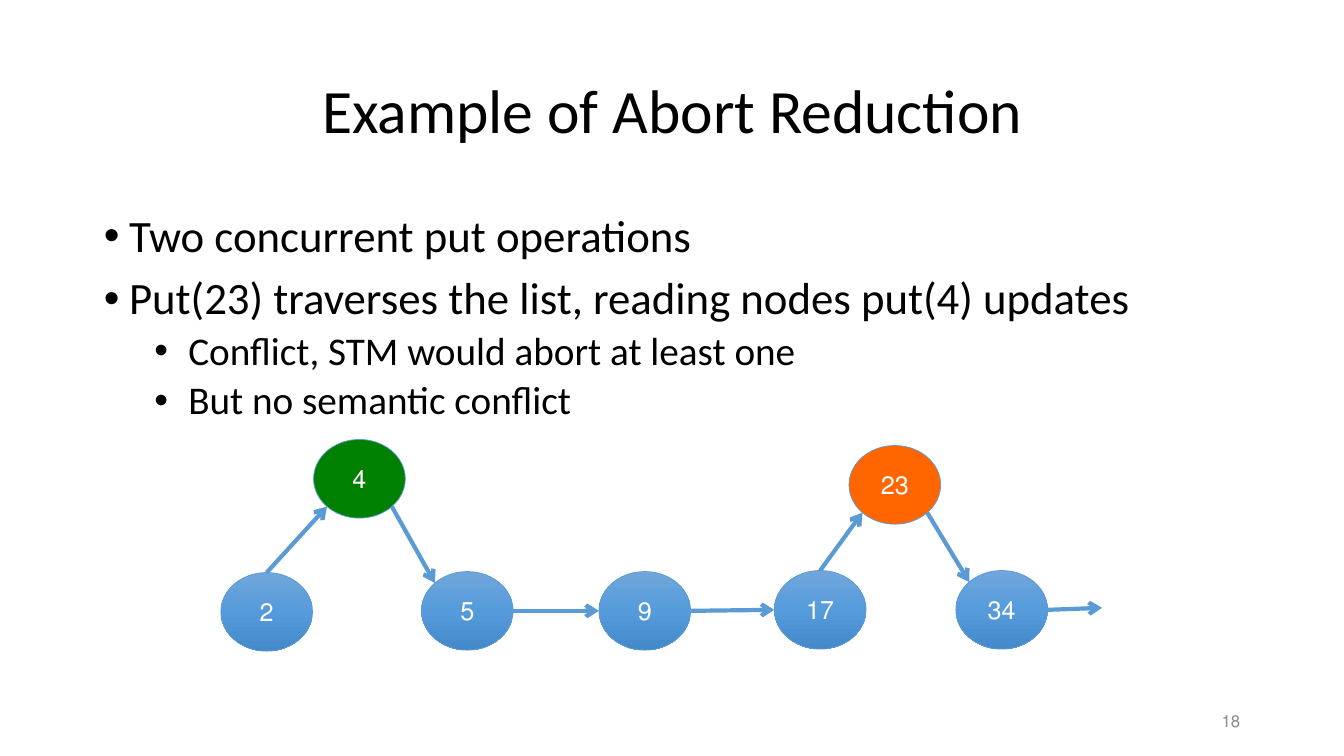
from copy import deepcopy

from lxml import etree
from pptx import Presentation
from pptx.dml.color import RGBColor
from pptx.enum.shapes import MSO_CONNECTOR, MSO_SHAPE
from pptx.enum.text import MSO_ANCHOR, MSO_AUTO_SIZE, PP_ALIGN
from pptx.oxml.ns import qn
from pptx.util import Inches, Pt

STRAIGHT = MSO_CONNECTOR.STRAIGHT
OVAL = MSO_SHAPE.OVAL
MIDDLE, TOP = MSO_ANCHOR.MIDDLE, MSO_ANCHOR.TOP
NO_AUTOFIT = MSO_AUTO_SIZE.NONE
LEFT, CENTER, RIGHT = PP_ALIGN.LEFT, PP_ALIGN.CENTER, PP_ALIGN.RIGHT

BLACK = RGBColor(0x00, 0x00, 0x00)
WHITE = RGBColor(0xFF, 0xFF, 0xFF)
GRAY = RGBColor(0x8C, 0x8C, 0x8C)
BLUE = RGBColor(0x5B, 0x9B, 0xD5)
GREEN = RGBColor(0x00, 0x80, 0x00)
ORANGE = RGBColor(0xFF, 0x66, 0x00)
NODE_GRADIENT = (
    (0, RGBColor(0x71, 0xA6, 0xDB)),
    (0.5, RGBColor(0x55, 0x9B, 0xDB)),
    (1, RGBColor(0x44, 0x8A, 0xCA)),
)

FONT = "Calibri"
NODE_WIDTH, NODE_HEIGHT = 0.91, 0.78
DIAGONAL = 0.5 ** 0.5
ANCHORS = {
    "top": (0, -1),
    "left": (-1, 0),
    "right": (1, 0),
    "top left": (-DIAGONAL, -DIAGONAL),
    "bottom left": (-DIAGONAL, DIAGONAL),
    "bottom right": (DIAGONAL, DIAGONAL),
}
NODES = {
    "2": (2.19, 5.68, None),
    "5": (4.18, 5.67, None),
    "9": (5.94, 5.67, None),
    "17": (7.68, 5.66, None),
    "34": (9.48, 5.66, None),
    "4": (3.11, 4.36, GREEN),
    "23": (8.42, 4.42, ORANGE),
}
LINKS = (
    ("2", "top", "4", "bottom left"),
    ("4", "bottom right", "5", "top left"),
    ("5", "right", "9", "left"),
    ("9", "right", "17", "left"),
    ("17", "top", "23", "bottom left"),
    ("23", "bottom right", "34", "top left"),
)
LIST_END = (10.93, 6.03)
BULLETS = (
    (0, "Two concurrent put operations"),
    (0, "Put(23) traverses the list, reading nodes put(4) updates"),
    (1, " Conflict, STM would abort at least one"),
    (1, " But no semantic conflict"),
)
LEVEL_STYLES = ((32, 10, 0.25), (28, 5, 0.75))


def place(box, left, top, width, height):
    """Move and size a box given in inches."""
    box.left, box.top = Inches(left), Inches(top)
    box.width, box.height = Inches(width), Inches(height)


def prepare_frame(frame, anchor):
    """Set wrapping, anchoring and autofit of a text frame."""
    frame.word_wrap = True
    frame.auto_size = NO_AUTOFIT
    frame.vertical_anchor = anchor


def add_run(paragraph, text, size, color, align):
    """Add one formatted run and align its paragraph."""
    paragraph.alignment = align
    run = paragraph.add_run()
    run.text = text
    run.font.name = FONT
    run.font.size = Pt(size)
    run.font.color.rgb = color


def add_number(frame, text, size, color, align):
    """Write a number in a right-to-left paragraph."""
    prepare_frame(frame, MIDDLE)
    paragraph = frame.paragraphs[0]
    add_run(paragraph, text, size, color, align)
    paragraph._p.get_or_add_pPr().set("rtl", "1")


def fill_title(title):
    """Place and write the slide title."""
    place(title, 0.92, 0.4, 11.5, 1.45)
    prepare_frame(title.text_frame, MIDDLE)
    heading = title.text_frame.paragraphs[0]
    heading.line_spacing = 0.9
    add_run(heading, "Example of Abort Reduction", 44, BLACK, CENTER)


def fill_bullets(body):
    """Place and write the two-level bullet list."""
    place(body, 0.93, 2.07, 11.5, 4.76)
    frame = body.text_frame
    prepare_frame(frame, TOP)
    for index, (level, text) in enumerate(BULLETS):
        bullet = frame.add_paragraph() if index else frame.paragraphs[0]
        size, space_before, indent = LEVEL_STYLES[level]
        bullet.level = level
        bullet.line_spacing = 0.9
        bullet.space_before = Pt(space_before)
        add_run(bullet, text, size, BLACK, LEFT)
        properties = bullet._p.get_or_add_pPr()
        properties.set("marL", str(Inches(indent)))
        properties.set("indent", str(Inches(-0.25)))
        etree.SubElement(properties, qn("a:buFont")).set("typeface", "Arial")
        etree.SubElement(properties, qn("a:buChar")).set("char", "•")


def fill_with_gradient(node):
    """Give a node the vertical three-stop gradient."""
    node.fill.gradient()
    node.fill.gradient_angle = 270
    stop_list = node._element.spPr.find(".//" + qn("a:gsLst"))
    stop_list.append(deepcopy(stop_list[-1]))
    for stop, (position, color) in zip(node.fill.gradient_stops, NODE_GRADIENT):
        stop.position = position
        stop.color.rgb = color


def add_node(slide, label, left, top, color):
    """Add a list node, with a gradient unless a color is given."""
    node = slide.shapes.add_shape(OVAL, Inches(left), Inches(top),
                                  Inches(NODE_WIDTH), Inches(NODE_HEIGHT))
    node.shadow.inherit = False
    if color is None:
        fill_with_gradient(node)
    else:
        node.fill.solid()
        node.fill.fore_color.rgb = color
    node.line.color.rgb = BLUE
    node.line.width = Pt(0.5)
    add_number(node.text_frame, label, 18, WHITE, CENTER)


def anchor_point(label, anchor):
    """Return the point of a node's outline at the named anchor."""
    left, top, _ = NODES[label]
    across, down = ANCHORS[anchor]
    return (left + NODE_WIDTH / 2 * (1 + across),
            top + NODE_HEIGHT / 2 * (1 + down))


def add_arrow(slide, start, end):
    """Add an arrow between two points in inches."""
    arrow = slide.shapes.add_connector(
        STRAIGHT, *(Inches(value) for value in start + end))
    arrow.line.color.rgb = BLUE
    arrow.line.width = Pt(3)
    line = arrow.line._get_or_add_ln()
    etree.SubElement(line, qn("a:tailEnd")).set("type", "arrow")
    etree.SubElement(arrow._element.spPr, qn("a:effectLst"))


def add_page_number(slide):
    """Add the page number at the lower right."""
    page_number = slide.shapes.add_textbox(
        Inches(9.4), Inches(6.95), Inches(3), Inches(0.4))
    add_number(page_number.text_frame, "18", 12, GRAY, RIGHT)


def main():
    """Build the slide and save it."""
    presentation = Presentation()
    presentation.slide_width = Inches(13.33)
    presentation.slide_height = Inches(7.5)
    slide = presentation.slides.add_slide(presentation.slide_layouts[1])
    fill_title(slide.shapes.title)
    fill_bullets(slide.placeholders[1])
    add_page_number(slide)
    for label, (left, top, color) in NODES.items():
        add_node(slide, label, left, top, color)
    for source, source_anchor, target, target_anchor in LINKS:
        add_arrow(slide, anchor_point(source, source_anchor),
                  anchor_point(target, target_anchor))
    add_arrow(slide, anchor_point("34", "right"), LIST_END)
    presentation.save("out.pptx")


if __name__ == "__main__":
    main()
